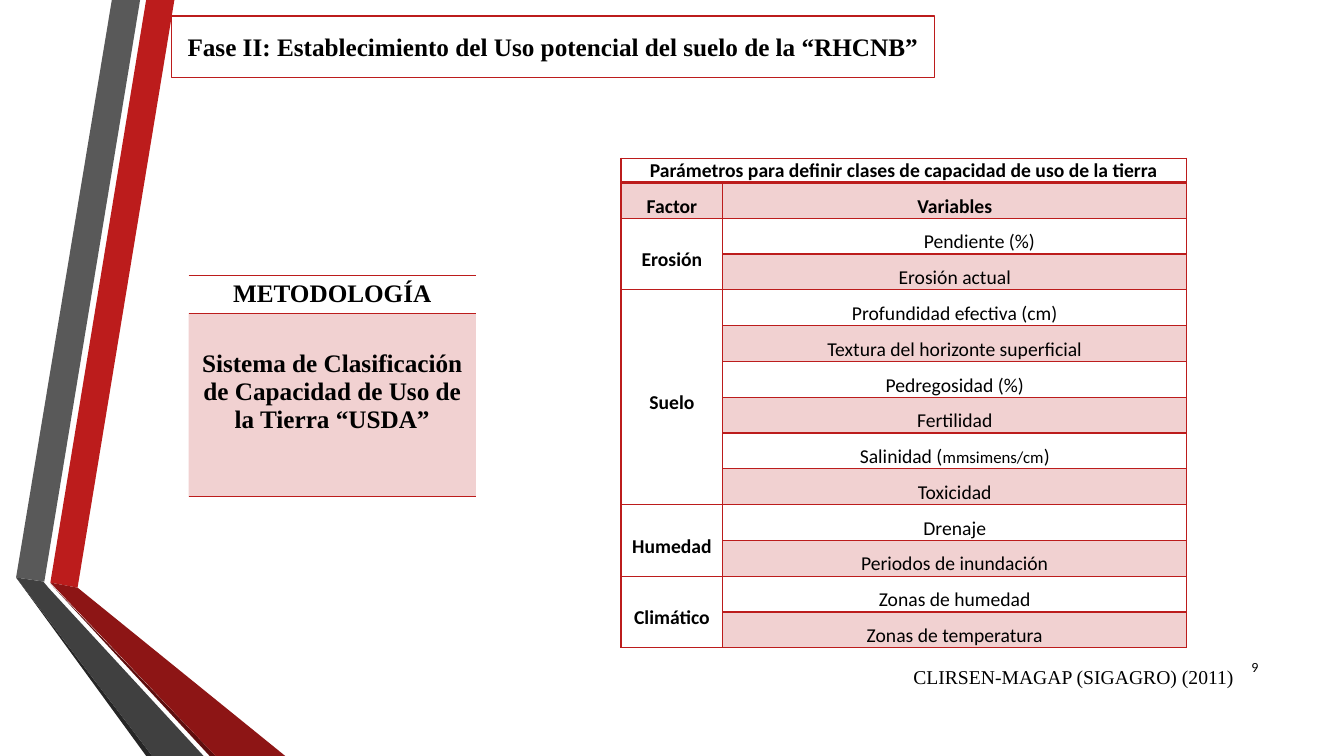
from dataclasses import dataclass

import pptx
import pptx.dml.color
import pptx.enum.text
import pptx.oxml
import pptx.oxml.ns
import pptx.util
from lxml import etree

Inches, Pt = pptx.util.Inches, pptx.util.Pt
RGBColor = pptx.dml.color.RGBColor
PP_ALIGN = pptx.enum.text.PP_ALIGN
MSO_ANCHOR = pptx.enum.text.MSO_ANCHOR
MSO_AUTO_SIZE = pptx.enum.text.MSO_AUTO_SIZE
qn = pptx.oxml.ns.qn

RED = RGBColor(0xBC, 0x1C, 0x1C)
DARK_RED = RGBColor(0x8D, 0x15, 0x15)
DEEP_RED = RGBColor(0x5E, 0x0E, 0x0E)
GREY = RGBColor(0x59, 0x59, 0x59)
DARK_GREY = RGBColor(0x40, 0x40, 0x40)
DEEP_GREY = RGBColor(0x26, 0x26, 0x26)
BLACK = RGBColor(0, 0, 0)
WHITE = RGBColor(0xFF, 0xFF, 0xFF)

SERIF, SANS = "Times New Roman", "Calibri"
NO_STYLE = "{2D5ABB26-0587-4C30-8999-92F81FD0307C}"


@dataclass
class Ribbon:
    color: RGBColor
    points: list[tuple[float, float]]


@dataclass
class Factor:
    name: str
    variables: list[str]


RIBBONS = [
    Ribbon(RED, [(0.5, 5.78), (0.77, 5.83), (1.73, 0), (1.45, 0)]),
    Ribbon(GREY, [(1.39, 0), (1.11, 0), (0.16, 5.73), (0.44, 5.77)]),
    Ribbon(DEEP_GREY, [(0.16, 5.73), (1.45, 7.5), (1.51, 7.5)]),
    Ribbon(DEEP_RED, [(0.5, 5.79), (2.08, 7.5), (2.14, 7.5)]),
    Ribbon(DARK_RED, [(0.5, 5.78), (2.14, 7.5), (2.83, 7.5), (0.77, 5.83)]),
    Ribbon(DARK_GREY, [(2.02, 7.5), (0.48, 5.83), (0.43, 5.77), (0.16, 5.73), (1.51, 7.5)]),
]

FACTORS = [
    Factor("Erosión", ["Pendiente (%)", "Erosión actual"]),
    Factor("Suelo", ["Profundidad efectiva (cm)", "Textura del horizonte superficial",
                     "Pedregosidad (%)", "Fertilidad", "Salinidad (", "Toxicidad"]),
    Factor("Humedad", ["Drenaje", "Periodos de inundación"]),
    Factor("Climático", ["Zonas de humedad", "Zonas de temperatura"]),
]


def add_text(p, text: str, *, size: float = 14, font: str = SANS, bold: bool = False,
             align=PP_ALIGN.CENTER, spacing: float = 1.0):
    """Append a formatted run to a paragraph."""
    p.alignment = align
    p.line_spacing = spacing
    r = p.add_run()
    r.text = text
    r.font.size, r.font.name, r.font.bold = Pt(size), font, bold
    r.font.color.rgb = BLACK


def add_ribbon(s, ribbon: Ribbon) -> None:
    start, *rest = [(Inches(x), Inches(y)) for x, y in ribbon.points]
    builder = s.shapes.build_freeform(*start)
    builder.add_line_segments(rest, close=True)
    sp = builder.convert_to_shape()
    sp.shadow.inherit = False
    sp.fill.solid()
    sp.fill.fore_color.rgb = ribbon.color
    sp.line.fill.background()


def add_plain_table(s, left: float, top: float, widths: list[float], heights: list[float]):
    """Add a table without banding or built-in style."""
    frame = s.shapes.add_table(len(heights), len(widths), Inches(left), Inches(top),
                               Inches(sum(widths)), Inches(sum(heights)))
    table = frame.table
    table.first_row = table.horz_banding = False
    table._tbl.tblPr.find(qn("a:tableStyleId")).text = NO_STYLE
    for column, width in zip(table.columns, widths):
        column.width = Inches(width)
    for row, height in zip(table.rows, heights):
        row.height = Inches(height)
    return table


def style_cell(cell, borders: dict[str, float], tinted: bool) -> None:
    """Set borders (side letter to points) and the translucent red fill."""
    tc_pr = cell._tc.get_or_add_tcPr()
    for side in "LRTB":
        width = borders.get(side, 0)
        ln = etree.SubElement(tc_pr, qn(f"a:ln{side}"), w=str(Pt(width)))
        if width:
            fill = etree.SubElement(ln, qn("a:solidFill"))
            etree.SubElement(fill, qn("a:srgbClr"), val=str(RED))
        else:
            etree.SubElement(ln, qn("a:noFill"))
    if tinted:
        cell.fill.solid()
        cell.fill.fore_color.rgb = RED
        color = tc_pr.find(qn("a:solidFill")).find(qn("a:srgbClr"))
        etree.SubElement(color, qn("a:alpha"), val="20000")
    else:
        cell.fill.background()
    cell.vertical_anchor = MSO_ANCHOR.MIDDLE


def add_title(s) -> None:
    title = s.shapes.title
    title.left, title.top = Inches(1.7), Inches(0.16)
    title.width, title.height = Inches(7.57), Inches(0.61)
    title.fill.solid()
    title.fill.fore_color.rgb = WHITE
    title.line.color.rgb = RED
    title.line.width = Pt(1.25)
    tf = title.text_frame
    tf.auto_size = MSO_AUTO_SIZE.NONE
    tf.vertical_anchor = MSO_ANCHOR.MIDDLE
    add_text(tf.paragraphs[0],
             "Fase II: Establecimiento del Uso potencial del suelo de la “RHCNB”",
             size=18, font=SERIF, bold=True)
    s.shapes._spTree.append(title._element)


def add_method_table(s) -> None:
    table = add_plain_table(s, 1.87, 2.73, [2.85], [0.38, 1.82])
    texts = ["METODOLOGÍA", "Sistema de Clasificación de Capacidad de Uso de la Tierra “USDA”"]
    for i, text in enumerate(texts):
        cell = table.cell(i, 0)
        style_cell(cell, {"T": 1, "B": 1}, tinted=i == 1)
        add_text(cell.text_frame.paragraphs[0], text, size=18, font=SERIF, bold=True)
    table.cell(1, 0).margin_bottom = Inches(0.32)


def add_parameter_table(s) -> None:
    count = sum(len(f.variables) for f in FACTORS)
    table = add_plain_table(s, 6.16, 1.57, [1.01, 4.6], [0.24] + [0.35] * (count + 1))
    for i in range(count + 2):
        for j in range(2):
            cell = table.cell(i, j)
            borders = {"L": 1, "R": 1, "T": 2 if i == 1 else 1, "B": 2 if i == 0 else 1}
            style_cell(cell, borders, tinted=i == 1 or (j == 1 and i % 2 == 1))
            cell.margin_left = cell.margin_right = Inches(0.07)
            cell.margin_top = cell.margin_bottom = 0

    def write(row: int, col: int, text: str, bold: bool = True, spacing: float = 1.5):
        p = table.cell(row, col).text_frame.paragraphs[0]
        add_text(p, text, bold=bold, spacing=spacing)
        return p

    table.cell(0, 0).merge(table.cell(0, 1))
    write(0, 0, "Parámetros para definir clases de capacidad de uso de la tierra", spacing=1.0)
    write(1, 0, "Factor")
    write(1, 1, "Variables")
    row = 2
    for factor in FACTORS:
        table.cell(row, 0).merge(table.cell(row + len(factor.variables) - 1, 0))
        write(row, 0, factor.name)
        for variable in factor.variables:
            p = write(row, 1, variable, bold=False)
            if variable.startswith("Pendiente"):
                p._p.get_or_add_pPr().set("indent", str(Inches(0.49)))
            if variable.startswith("Salinidad"):
                add_text(p, "mmsimens/cm", size=12, spacing=1.5)
                add_text(p, ")", spacing=1.5)
            row += 1


def add_label(s, left: float, top: float, width: float, height: float, text: str, *,
              wrap: bool = True, **fmt) -> None:
    tf = s.shapes.add_textbox(Inches(left), Inches(top), Inches(width), Inches(height)).text_frame
    tf.word_wrap = wrap
    tf.auto_size = MSO_AUTO_SIZE.NONE if wrap else MSO_AUTO_SIZE.SHAPE_TO_FIT_TEXT
    tf.vertical_anchor = MSO_ANCHOR.MIDDLE if wrap else MSO_ANCHOR.TOP
    add_text(tf.paragraphs[0], text, **fmt)


def main() -> None:
    prs = pptx.Presentation()
    prs.slide_width, prs.slide_height = Inches(13.33), Inches(7.5)
    s = prs.slides.add_slide(prs.slide_layouts[5])
    for ribbon in RIBBONS:
        add_ribbon(s, ribbon)
    add_label(s, 11.98, 6.42, 0.6, 0.4, "9", size=10, align=PP_ALIGN.RIGHT)
    add_title(s)
    add_method_table(s)
    add_parameter_table(s)
    add_label(s, 8.96, 6.55, 3.4, 0.34, "CLIRSEN-MAGAP (SIGAGRO) (2011)",
              wrap=False, font=SERIF, align=PP_ALIGN.LEFT)
    prs.save("out.pptx")


if __name__ == "__main__":
    main()
